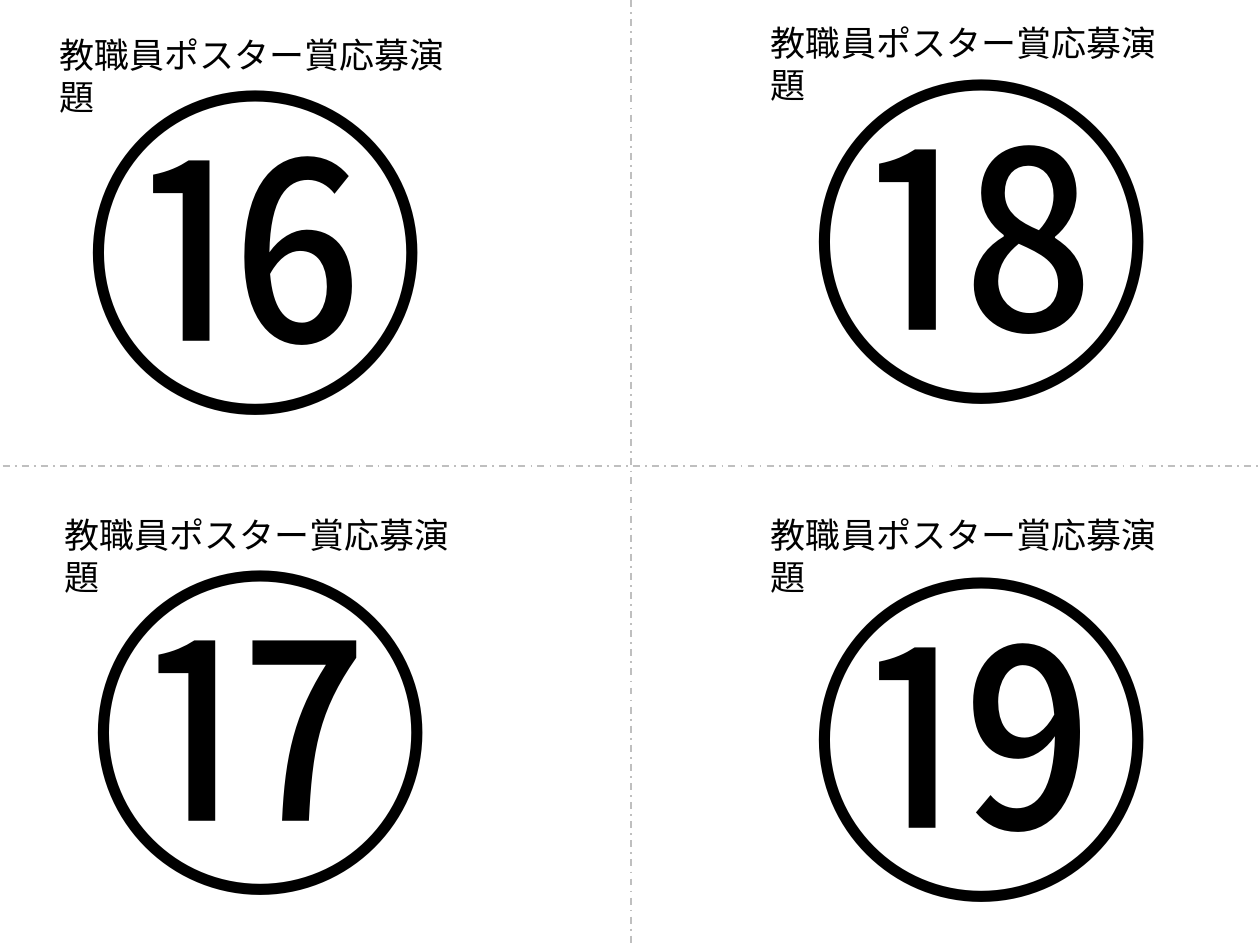
from lxml.etree import SubElement
from pptx import Presentation
from pptx.dml.color import RGBColor
from pptx.enum.dml import MSO_LINE
from pptx.enum.shapes import MSO_CONNECTOR
from pptx.enum.text import MSO_AUTO_SIZE
from pptx.oxml.ns import qn
from pptx.util import Inches, Pt


def color(value):
    return RGBColor.from_string(value)


def write(tf, text, *, size, font, fill):
    r = tf.paragraphs[0].add_run()
    r.text = text
    r.font.size = Pt(size)
    r.font.name = font
    r.font.color.rgb = color(fill)
    # Japanese characters take the East Asian typeface
    SubElement(r.font._element, qn("a:ea"), typeface=font)


class Sheet:
    font = "Noto Sans CJK JP"
    ink = "000000"
    guide = "BFBFBF"

    def __init__(self, slide):
        self.s = slide

    def cut_line(self, x1, y1, x2, y2):
        line = self.s.shapes.add_connector(
            MSO_CONNECTOR.STRAIGHT, Inches(x1), Inches(y1), Inches(x2), Inches(y2))
        line.line.color.rgb = color(self.guide)
        line.line.width = Pt(1)
        line.line.dash_style = MSO_LINE.DASH_DOT
        SubElement(line._element.spPr, qn("a:effectLst"))

    def text(self, text, x, y, w, h, size):
        sp = self.s.shapes.add_textbox(Inches(x), Inches(y), Inches(w), Inches(h))
        tf = sp.text_frame
        tf.word_wrap = True
        tf.auto_size = MSO_AUTO_SIZE.NONE
        write(tf, text, size=size, font=self.font, fill=self.ink)

    def label(self, number, number_at, title_at):
        self.text(number, *number_at, 2.99, 3.45, 199)
        self.text("教職員ポスター賞応募演題", *title_at, 3.45, 0.44, 20)


def main():
    prs = Presentation()
    prs.slide_width, prs.slide_height = Inches(10), Inches(7.5)
    sheet = Sheet(prs.slides.add_slide(prs.slide_layouts[6]))

    # Cutting guides
    sheet.cut_line(-0.13, 3.7, 10, 3.7)
    sheet.cut_line(5.01, 0, 5.01, 7.56)

    # Poster labels: number, its position, title position
    labels = [
        ("⑯", (0.55, 0.25), (0.37, 0.22)),
        ("⑰", (0.59, 4.06), (0.41, 4.03)),
        ("⑱", (6.31, 0.16), (6.02, 0.12)),
        ("⑲", (6.31, 4.11), (6.02, 4.03)),
    ]
    for number, number_at, title_at in labels:
        sheet.label(number, number_at, title_at)

    prs.save("out.pptx")


if __name__ == "__main__":
    main()
